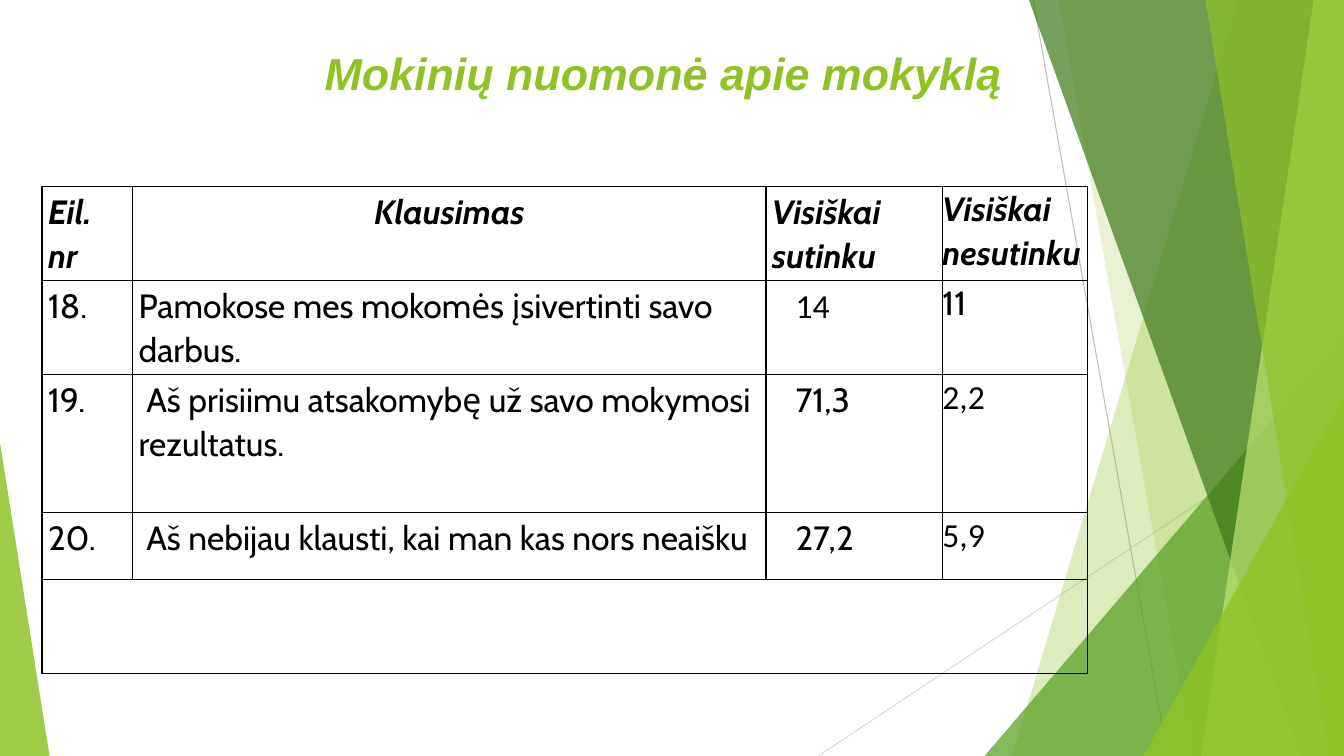
"""Build the slide on pupils' opinion of their school."""
from dataclasses import dataclass

from lxml.etree import SubElement
from pptx import Presentation
from pptx.dml.color import RGBColor
from pptx.enum.shapes import MSO_CONNECTOR, MSO_SHAPE
from pptx.enum.text import MSO_ANCHOR, PP_ALIGN
from pptx.oxml.ns import qn
from pptx.shapes.autoshape import Shape
from pptx.slide import Slide
from pptx.table import _Cell
from pptx.util import Emu, Inches, Pt

COLUMNS, ROWS = 160, 90
UNIT = Inches(1) // 12

BLACK = RGBColor(0x00, 0x00, 0x00)
LIME = RGBColor(0x90, 0xC2, 0x26)
PALE_LIME = RGBColor(0xC0, 0xE4, 0x74)
GREEN = RGBColor(0x54, 0xA0, 0x21)
DARK_GREEN = RGBColor(0x3F, 0x78, 0x19)
GREY = RGBColor(0xBF, 0xBF, 0xBF)
PALE_GREY = RGBColor(0xD9, 0xD9, 0xD9)


@dataclass(frozen=True)
class Ray:
    """A thin line between two grid points."""
    start: tuple[float, float]
    end: tuple[float, float]
    color: RGBColor


@dataclass(frozen=True)
class Panel:
    """A band from a slanted left edge to the right side of the slide."""
    top_column: float
    bottom_column: float
    color: RGBColor
    opacity: int


@dataclass(frozen=True)
class Wedge:
    """A right triangle standing on the bottom of the slide."""
    left: float
    top: float
    width: float
    peak: float
    color: RGBColor
    opacity: int


@dataclass(frozen=True)
class Entry:
    """The text of one table cell and its look."""
    text: str
    font: str = "Cabin"
    first_indent: float = 0
    bold: bool = False
    align: PP_ALIGN = PP_ALIGN.LEFT


RAYS = [
    Ray((123, 0), (139, 90), GREY),
    Ray((160, 48.4), (97.4, 90), PALE_GREY),
]
DECORATIONS = [
    Panel(147.4, 120.5, LIME, 30),
    Panel(126, 142, LIME, 20),
    Wedge(117.2, 40, 42.8, 1, GREEN, 72),
    Panel(122.5, 154.9, DARK_GREEN, 70),
    Panel(156.4, 143, PALE_LIME, 70),
    Panel(143.5, 158.2, LIME, 65),
    Wedge(136.1, 47.2, 23.9, 1, LIME, 80),
    Wedge(0, 52.7, 5.9, 0, LIME, 85),
]
COLUMN_WIDTHS = [10.8, 75.4, 21, 17.3]
ROW_HEIGHTS = [11.2, 11.2, 16.4, 8, 11.2]
SCORE_INDENT = 2.8
QUESTION_INDENT = 0.9
ENTRIES = [
    [Entry("Eil.\nnr", bold=True),
     Entry("Klausimas", bold=True, align=PP_ALIGN.CENTER),
     Entry("Visiškai sutinku", bold=True),
     Entry("Visiškai nesutinku", bold=True)],
    [Entry("18."),
     Entry("Pamokose mes mokomės įsivertinti savo darbus."),
     Entry("14", "Calibri", SCORE_INDENT),
     Entry("11")],
    [Entry("19."),
     Entry("Aš prisiimu atsakomybę už savo mokymosi rezultatus.",
           first_indent=QUESTION_INDENT),
     Entry("71,3", first_indent=SCORE_INDENT),
     Entry("2,2", "Calibri")],
    [Entry("20."),
     Entry("Aš nebijau klausti, kai man kas nors neaišku",
           first_indent=QUESTION_INDENT),
     Entry("27,2", first_indent=SCORE_INDENT),
     Entry("5,9", "Calibri")],
]


def grid(count: float) -> Emu:
    """Return the length of a number of grid units."""
    return Emu(round(count * UNIT))


def draw_ray(page: Slide, ray: Ray) -> None:
    """Draw a thin line without a shadow."""
    line = page.shapes.add_connector(
        MSO_CONNECTOR.STRAIGHT, *map(grid, ray.start + ray.end))
    line.line.color.rgb = ray.color
    line.line.width = Pt(0.75)
    SubElement(line.element.spPr, qn("a:effectLst"))


def paint(shape: Shape, color: RGBColor, opacity: int) -> None:
    """Give a shape a see-through fill and no outline."""
    shape.shadow.inherit = False
    shape.line.fill.background()
    shape.fill.solid()
    shape.fill.fore_color.rgb = color
    tint = shape.element.spPr.find(".//" + qn("a:srgbClr"))
    SubElement(tint, qn("a:alpha"), val=str(opacity * 1000))


def draw_decoration(page: Slide, item: Panel | Wedge) -> None:
    """Draw one green band or triangle."""
    if isinstance(item, Panel):
        builder = page.shapes.build_freeform(grid(item.top_column), 0)
        corners = [(COLUMNS, 0), (COLUMNS, ROWS), (item.bottom_column, ROWS)]
        builder.add_line_segments([(grid(x), grid(y)) for x, y in corners])
        shape = builder.convert_to_shape()
    else:
        shape = page.shapes.add_shape(
            MSO_SHAPE.ISOSCELES_TRIANGLE, grid(item.left), grid(item.top),
            grid(item.width), grid(ROWS - item.top))
        shape.adjustments[0] = item.peak
    paint(shape, item.color, item.opacity)


def draw_title(page: Slide) -> None:
    """Place the title in front of the decorations."""
    title = page.shapes.title
    title.element.getparent().append(title.element)
    title.left, title.top = grid(9.2), grid(4.8)
    title.width, title.height = grid(139.6), grid(17.3)
    title.text_frame.text = "Mokinių nuomonė apie mokyklą"
    title.text_frame.vertical_anchor = MSO_ANCHOR.TOP
    para = title.text_frame.paragraphs[0]
    para.alignment = PP_ALIGN.CENTER
    font = para.runs[0].font
    font.name, font.size = "Arial", Pt(32)
    font.bold = font.italic = True
    font.color.rgb = LIME


def frame_cell(cell: _Cell) -> None:
    """Give a cell black borders and no fill."""
    properties = cell._tc.get_or_add_tcPr()
    for side in ("a:lnL", "a:lnR", "a:lnT", "a:lnB"):
        border = SubElement(properties, qn(side), w=str(Pt(1)))
        fill = SubElement(border, qn("a:solidFill"))
        SubElement(fill, qn("a:srgbClr"), val=str(BLACK))
    cell.fill.background()


def write_cell(cell: _Cell, entry: Entry, inset: float) -> None:
    """Write and format the text of a cell."""
    cell.margin_left = cell.margin_right = Inches(inset)
    cell.margin_top = cell.margin_bottom = Inches(inset / 2)
    cell.text_frame.text = entry.text
    for para in cell.text_frame.paragraphs:
        para.alignment = entry.align
        para.line_spacing = 1.07
        if entry.first_indent:
            para._p.get_or_add_pPr().set("indent", str(grid(entry.first_indent)))
        for span in para.runs:
            span.font.name, span.font.size = entry.font, Pt(24)
            span.font.bold = span.font.italic = entry.bold
            span.font.color.rgb = BLACK


def draw_table(page: Slide) -> None:
    """Draw the table of answers with its merged last row."""
    table = page.shapes.add_table(
        len(ROW_HEIGHTS), len(COLUMN_WIDTHS), grid(5), grid(22.2),
        grid(sum(COLUMN_WIDTHS)), grid(sum(ROW_HEIGHTS))).table
    table.first_row = table.horz_banding = False
    for column, width in zip(table.columns, COLUMN_WIDTHS):
        column.width = grid(width)
    for row, height in zip(table.rows, ROW_HEIGHTS):
        row.height = grid(height)
    for cell in table.iter_cells():
        frame_cell(cell)
    last_row, last_column = len(ROW_HEIGHTS) - 1, len(COLUMN_WIDTHS) - 1
    for row, entries in enumerate(ENTRIES):
        for column, entry in enumerate(entries):
            inset = 0 if column == last_column else 0.06
            write_cell(table.cell(row, column), entry, inset)
    table.cell(last_row, 0).merge(table.cell(last_row, last_column))


def main() -> None:
    """Build and save the deck."""
    deck = Presentation()
    deck.slide_width, deck.slide_height = grid(COLUMNS), grid(ROWS)
    page = deck.slides.add_slide(deck.slide_layouts.get_by_name("Title Only"))
    for ray in RAYS:
        draw_ray(page, ray)
    for item in DECORATIONS:
        draw_decoration(page, item)
    draw_title(page)
    draw_table(page)
    deck.save("out.pptx")


if __name__ == "__main__":
    main()
